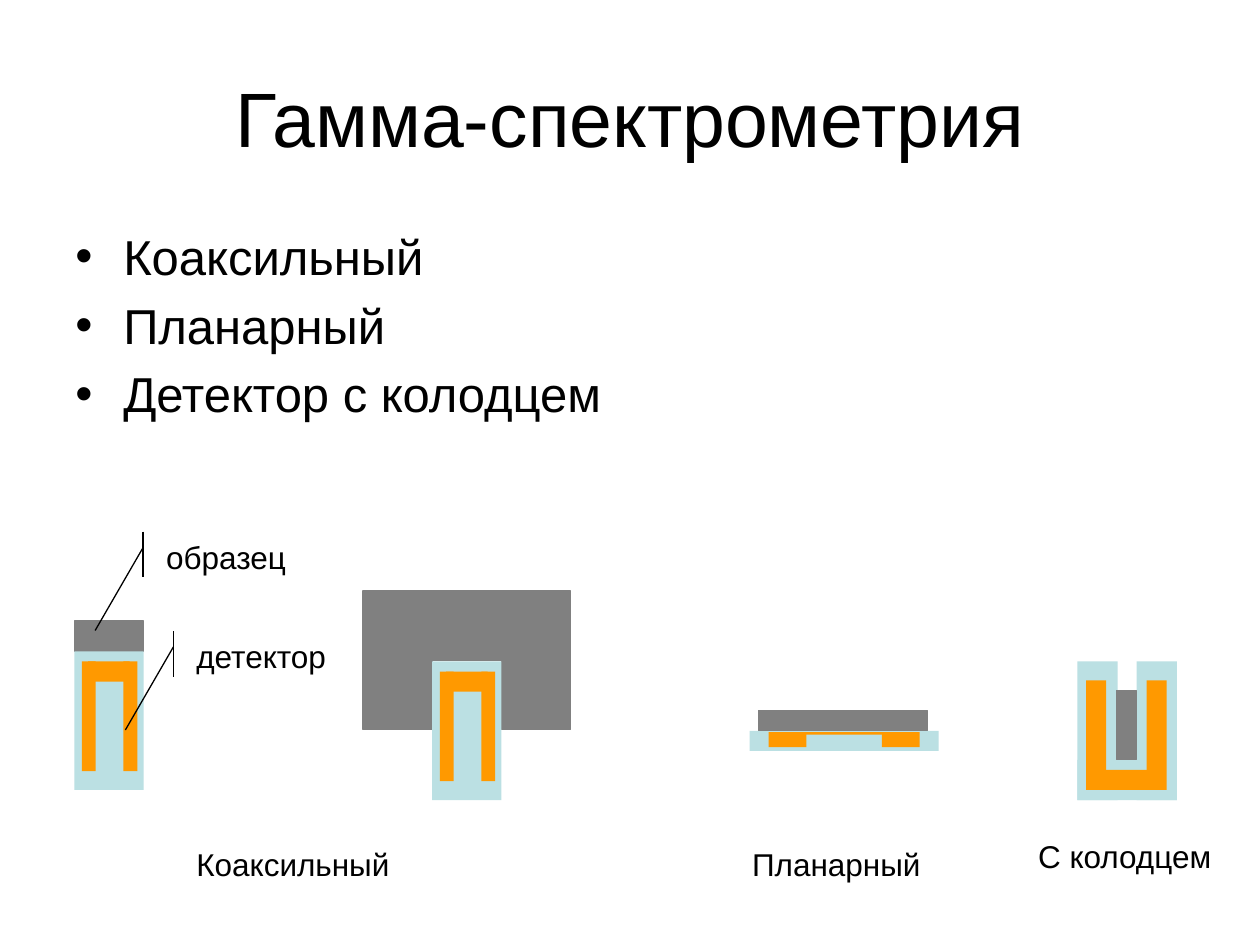
from dataclasses import dataclass
from lxml.etree import SubElement
from pptx import Presentation
from pptx.dml.color import RGBColor
from pptx.enum.shapes import MSO_SHAPE
from pptx.enum.text import MSO_ANCHOR, MSO_AUTO_SIZE, PP_ALIGN
from pptx.oxml.ns import qn
from pptx.util import Pt

SCALE = 9144


@dataclass(frozen=True)
class Theme:
    font: str = "Arial"
    title: int = 44
    body: int = 28
    label: int = 18
    gap: float = 5.6
    line: float = 0.75
    ink: RGBColor = RGBColor(0x00, 0x00, 0x00)
    sample: RGBColor = RGBColor(0x80, 0x80, 0x80)
    case: RGBColor = RGBColor(0xBB, 0xE0, 0xE3)
    crystal: RGBColor = RGBColor(0xFF, 0x99, 0x00)


T = Theme()


def px(*values):
    return [v * SCALE for v in values]


def add_run(p, text, size):
    r = p.add_run()
    r.text = text
    r.font.name, r.font.size = T.font, Pt(size)
    r.font.color.rgb = T.ink


def add_rects(parent, x, y, color, boxes, outlined=False):
    for dx, dy, w, h in boxes:
        sp = parent.shapes.add_shape(MSO_SHAPE.RECTANGLE, *px(x + dx, y + dy, w, h))
        sp.shadow.inherit = False
        sp.fill.solid()
        sp.fill.fore_color.rgb = color
        if outlined:
            sp.line.color.rgb = color
            sp.line.width = Pt(T.line)
        else:
            sp.line.fill.background()


def add_title(s, x, y, w, h, text):
    sp = s.shapes.title
    sp.left, sp.top, sp.width, sp.height = px(x, y, w, h)
    tf = sp.text_frame
    tf.vertical_anchor = MSO_ANCHOR.MIDDLE
    p = tf.paragraphs[0]
    p.alignment = PP_ALIGN.CENTER
    add_run(p, text, T.title)


def add_bullets(s, x, y, w, h, items):
    tf = s.shapes.add_textbox(*px(x, y, w, h)).text_frame
    tf.word_wrap = True
    for i, text in enumerate(items):
        p = tf.add_paragraph() if i else tf.paragraphs[0]
        p.space_before = Pt(T.gap)
        pPr = p._p.get_or_add_pPr()
        indent = 38 * SCALE
        pPr.set("marL", str(indent))
        pPr.set("indent", str(-indent))
        SubElement(pPr, qn("a:buFont"), typeface=T.font)
        SubElement(pPr, qn("a:buChar"), char="•")
        add_run(p, text, T.body)


def add_label(s, x, y, w, h, text):
    tf = s.shapes.add_textbox(*px(x, y, w, h)).text_frame
    tf.word_wrap = False
    tf.auto_size = MSO_AUTO_SIZE.SHAPE_TO_FIT_TEXT
    add_run(tf.paragraphs[0], text, T.label)


def add_callout(s, x, y, w, h, text):
    sp = s.shapes.add_shape(MSO_SHAPE.LINE_CALLOUT_1_ACCENT_BAR, *px(x, y, w, h))
    for i, value in enumerate((0.35, -0.06, 2.18, -0.33)):
        sp.adjustments[i] = value
    sp.shadow.inherit = False
    sp.fill.background()
    sp.line.color.rgb = T.ink
    sp.line.width = Pt(T.line)
    tf = sp.text_frame
    tf.vertical_anchor = MSO_ANCHOR.TOP
    p = tf.paragraphs[0]
    p.alignment = PP_ALIGN.LEFT
    add_run(p, text, T.label)


def add_coaxial(s, x, y):
    g = s.shapes.add_group_shape()
    add_rects(g, x, y, T.case, [(0, 0, 55, 110)])
    add_rects(g, x, y, T.crystal, [(11, 8, 33, 16), (6, 8, 11, 87), (39, 8, 11, 87)])


def add_beaker(s, x, y):
    g = s.shapes.add_group_shape()
    parts = [(31, 0, 95, 55), (110, 0, 55, 110), (0, 0, 55, 110)]
    add_rects(g, x, y, T.sample, parts, outlined=True)


def add_planar(s, x, y):
    g = s.shapes.add_group_shape()
    add_rects(g, x, y, T.case, [(0, 0, 150, 16)])
    add_rects(g, x, y, T.crystal, [(30, 1, 90, 2), (15, 1, 30, 12), (105, 1, 30, 12)])
    add_rects(s, x, y, T.sample, [(7, -16, 134, 16)], outlined=True)


def add_well(s, x, y):
    g = s.shapes.add_group_shape()
    add_rects(g, x, y, T.case, [(0, 78, 79, 32), (0, 0, 32, 110), (47, 0, 32, 110)])
    add_rects(g, x, y, T.crystal, [(15, 86, 47, 16), (55, 15, 16, 87), (7, 15, 16, 87)])
    add_rects(s, x, y, T.sample, [(31, 23, 16, 55)], outlined=True)


def main():
    prs = Presentation()
    prs.slide_width, prs.slide_height = px(1000, 750)
    s = prs.slides.add_slide(prs.slide_layouts[5])
    add_title(s, 50, 30, 900, 125, "Гамма-спектрометрия")
    add_bullets(s, 50, 175, 442, 224, ["Коаксильный", "Планарный", "Детектор с колодцем"])
    add_rects(s, 59, 493, T.sample, [(0, 0, 55, 24)], outlined=True)
    add_coaxial(s, 59, 517)
    add_beaker(s, 288, 469)
    add_coaxial(s, 343, 525)
    add_planar(s, 595, 580)
    add_well(s, 855, 525)
    add_label(s, 146, 666, 178, 40, "Коаксильный")
    add_label(s, 587, 666, 158, 40, "Планарный")
    add_label(s, 814, 659, 162, 40, "С колодцем")
    add_callout(s, 122, 422, 141, 36, "образец")
    add_callout(s, 146, 501, 141, 36, "детектор")
    prs.save("out.pptx")


if __name__ == "__main__":
    main()
